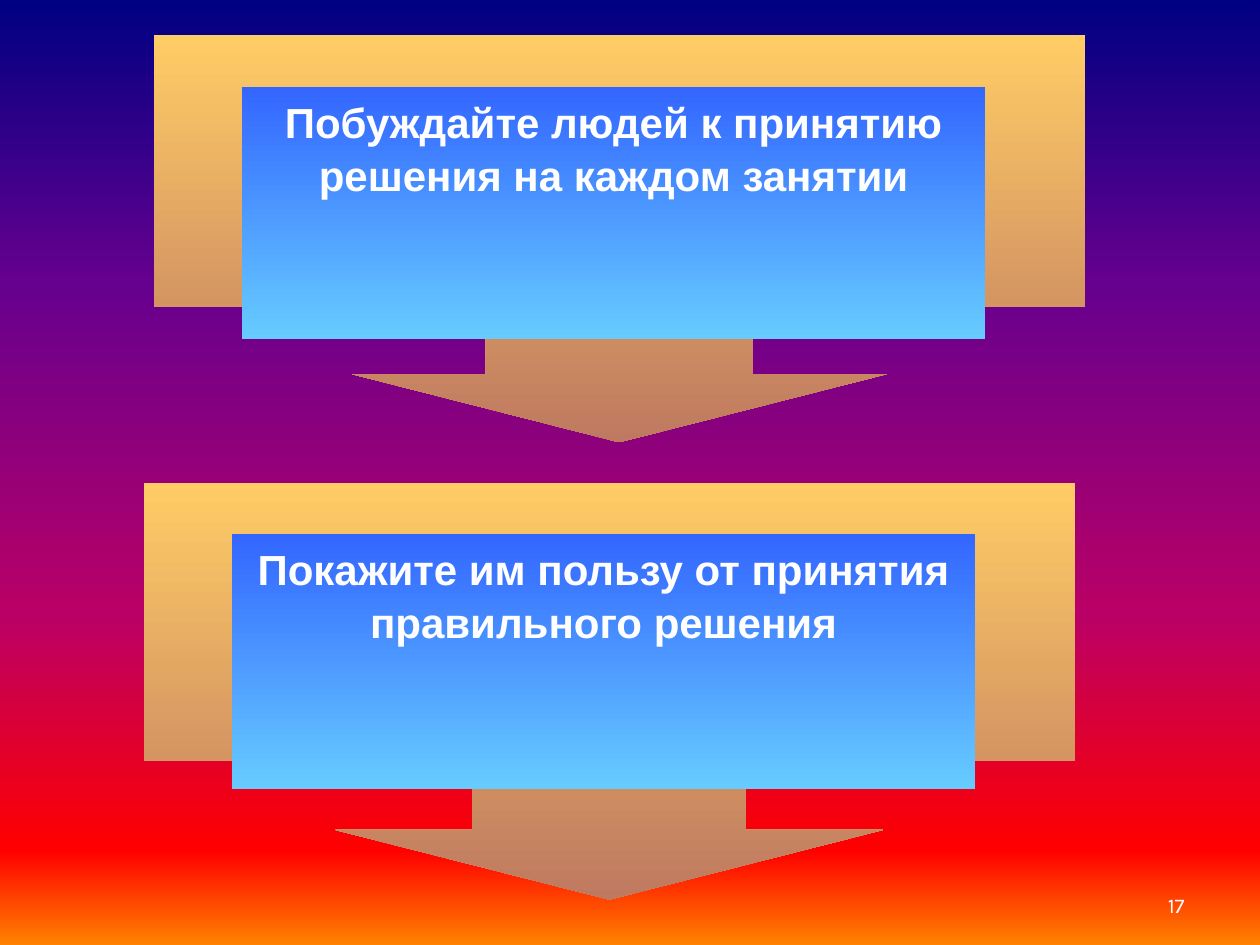
from lxml.etree import SubElement
from pptx import Presentation
from pptx.dml.color import RGBColor
from pptx.enum.shapes import MSO_SHAPE
from pptx.enum.text import MSO_ANCHOR, PP_ALIGN
from pptx.oxml.ns import qn
from pptx.util import Inches, Pt

COLORS = {
    "white": "FFFFFF",
    "sand": "FFCC66", "clay": "BE7960",
    "blue": "3366FF", "sky": "66CCFF",
    "navy": "000082", "violet": "66008F", "crimson": "BA0066",
    "red": "FF0000", "orange": "FF8200",
}
SUNSET = [(0, "navy"), (30, "violet"), (65, "crimson"), (90, "red"), (100, "orange")]
CALLOUT = [(0, "sand"), (100, "clay")]
PANEL = [(0, "blue"), (100, "sky")]

# Wording, callout left, top and height, panel height
STEPS = [
    ("Побуждайте людей к принятию решения на каждом занятии", 1.22, 0.28, 3.23, 2.0),
    ("Покажите им пользу от принятия правильного решения", 1.14, 3.83, 3.31, 2.02),
]
CALLOUT_WIDTH, PANEL_WIDTH = 7.39, 5.9
PANEL_DX, PANEL_DY = 0.7, 0.41
ARROW_PROPORTIONS = (0.656, 0.656, 0.167, 0.667)
PAGE_NUMBER = "17"


def fill_downwards(fill, owner, stops):
    """Fill with a top-to-bottom gradient of (percent, colour name) stops."""
    fill.gradient()
    fill.gradient_angle = 270
    stop_list = next(owner.iter(qn("a:gsLst")))
    for old_stop in list(stop_list):
        stop_list.remove(old_stop)
    for percent, name in stops:
        stop = SubElement(stop_list, qn("a:gs"), pos=str(percent * 1000))
        SubElement(stop, qn("a:srgbClr"), val=COLORS[name])


def add_block(shapes, preset, left, top, width, height, stops):
    block = shapes.add_shape(preset, Inches(left), Inches(top),
                             Inches(width), Inches(height))
    block.shadow.inherit = False
    block.line.fill.background()
    fill_downwards(block.fill, block.element, stops)
    return block


def write(frame, text, font_name, size, align, anchor, bold=False):
    frame.text = text
    frame.word_wrap = True
    frame.vertical_anchor = anchor
    paragraph = frame.paragraphs[0]
    paragraph.alignment = align
    font = paragraph.runs[0].font
    font.name, font.size, font.bold = font_name, Pt(size), bold
    font.color.rgb = RGBColor.from_string(COLORS["white"])
    return paragraph


def main():
    deck = Presentation()
    deck.slide_width, deck.slide_height = Inches(10), Inches(7.5)
    slide = deck.slides.add_slide(deck.slide_layouts[6])
    fill_downwards(slide.background.fill, slide.element, SUNSET)

    # Page number
    page = slide.shapes.add_textbox(Inches(7.17), Inches(6.83), Inches(2.33), Inches(0.5))
    write(page.text_frame, PAGE_NUMBER, "Karla", 12, PP_ALIGN.RIGHT, MSO_ANCHOR.BOTTOM)

    # Each step: an arrow callout with a text panel over it
    for wording, left, top, callout_height, panel_height in STEPS:
        step = slide.shapes.add_group_shape().shapes
        callout = add_block(step, MSO_SHAPE.DOWN_ARROW_CALLOUT, left, top,
                            CALLOUT_WIDTH, callout_height, CALLOUT)
        for index, proportion in enumerate(ARROW_PROPORTIONS):
            callout.adjustments[index] = proportion
        panel = add_block(step, MSO_SHAPE.RECTANGLE, left + PANEL_DX, top + PANEL_DY,
                          PANEL_WIDTH, panel_height, PANEL)
        paragraph = write(panel.text_frame, wording, "Arial", 24,
                          PP_ALIGN.CENTER, MSO_ANCHOR.TOP, bold=True)
        paragraph.line_spacing = 1.06

    deck.save("out.pptx")


if __name__ == "__main__":
    main()
